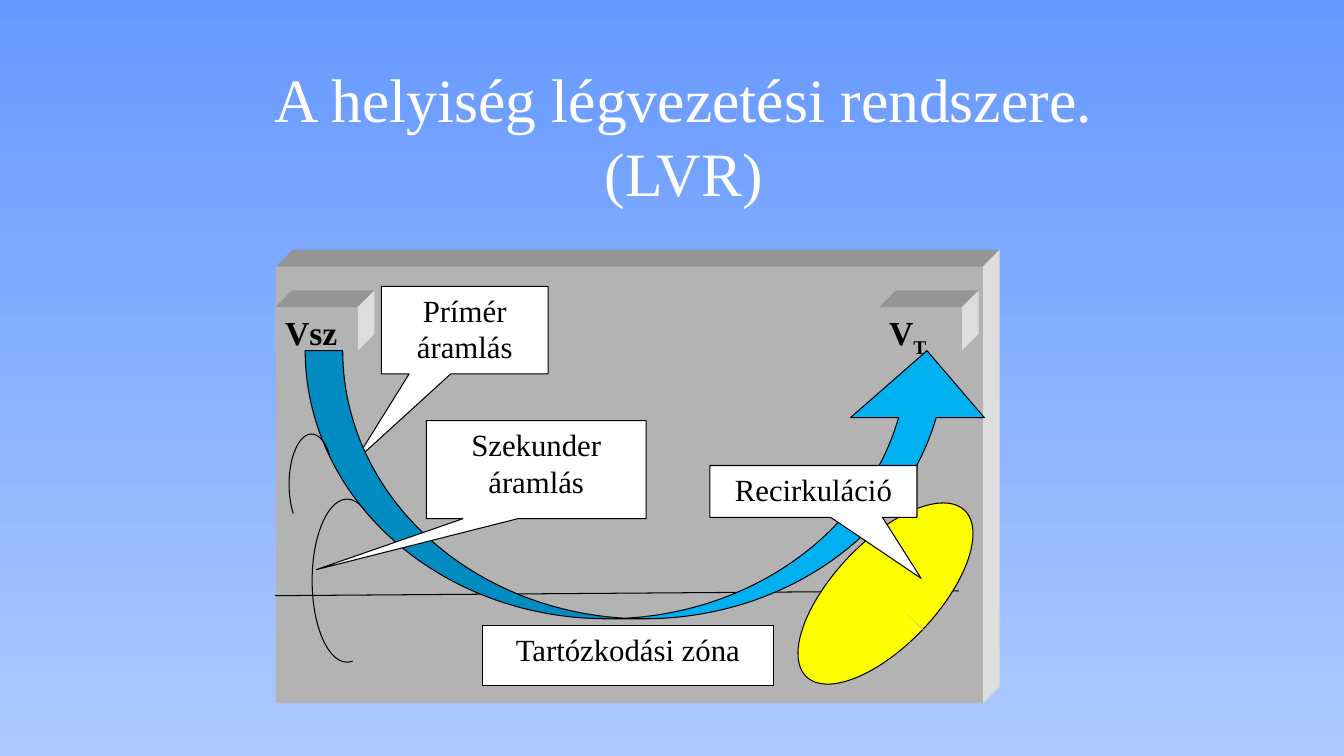
from pptx import Presentation
from pptx.dml.color import RGBColor
from pptx.enum.shapes import MSO_CONNECTOR, MSO_SHAPE
from pptx.enum.text import MSO_ANCHOR, PP_ALIGN
from pptx.oxml.ns import qn
from pptx.util import Pt
from lxml.etree import SubElement

COLORS = {
    "sky": "6699FF", "haze": "ADC9FF", "white": "FFFFFF", "black": "000000",
    "front": "B3B3B3", "top": "959595", "side": "DDDDDD",
    "air": "00B0F0", "recirculation": "FFFF00",
}
FONT = "Times New Roman"
DEPTH = 12


def rgb(name):
    return RGBColor.from_string(COLORS[name])


class RoomSlide:
    def __init__(self, prs):
        self.slide = prs.slides.add_slide(prs.slide_layouts[5])
        self.shapes = self.slide.shapes

    def background(self, start, end):
        fill = self.slide.background.fill
        fill.gradient()
        fill.gradient_angle = 270
        for stop, name, pos in zip(fill.gradient_stops, (start, end), (0, 1)):
            stop.color.rgb = rgb(name)
            stop.position = pos

    def text(self, sp, text, size, color="black", bold=False,
             align=PP_ALIGN.CENTER, anchor=MSO_ANCHOR.TOP):
        tf = sp.text_frame
        tf.text = text
        tf.word_wrap = True
        tf.vertical_anchor = anchor
        for p in tf.paragraphs:
            p.alignment = align
            for r in p.runs:
                self.font(r, size, color, bold)

    def font(self, r, size, color, bold):
        r.font.name = FONT
        r.font.size = Pt(size)
        r.font.bold = bold
        r.font.color.rgb = rgb(color)

    def title(self, text, x, y, w, h):
        sp = self.shapes.title
        sp.left, sp.top, sp.width, sp.height = Pt(x), Pt(y), Pt(w), Pt(h)
        self.text(sp, text, 44, "white", anchor=MSO_ANCHOR.MIDDLE)

    def paint(self, sp, fill, line):
        sp.shadow.inherit = False
        if fill:
            sp.fill.solid()
            sp.fill.fore_color.rgb = rgb(fill)
        else:
            sp.fill.background()
        if line:
            sp.line.color.rgb = rgb(line)
            sp.line.width = Pt(0.75)
        else:
            sp.line.fill.background()

    def shape(self, kind, x, y, w, h, fill=None, line="black", adj=()):
        sp = self.shapes.add_shape(kind, Pt(x), Pt(y), Pt(w), Pt(h))
        for i, value in enumerate(adj):
            sp.adjustments[i] = value
        self.paint(sp, fill, line)
        return sp

    def block(self, x, y, w, h):
        """Draw a box with a top and a right face, and return its front."""
        d, right, bottom = DEPTH, x + w, y + h
        faces = {
            "top": [(x, y), (x + d, y - d), (right + d, y - d), (right, y)],
            "side": [(right, y), (right + d, y - d),
                     (right + d, bottom - d), (right, bottom)],
        }
        for color, points in faces.items():
            points = [(Pt(px), Pt(py)) for px, py in points]
            builder = self.shapes.build_freeform(*points[0])
            builder.add_line_segments(points[1:])
            self.paint(builder.convert_to_shape(), color, None)
        return self.shape(MSO_SHAPE.RECTANGLE, x, y, w, h, "front", None)

    def vent(self, x, y, name, subscript=""):
        sp = self.block(x, y, 59, 31)
        self.text(sp, name, 24, bold=True, align=PP_ALIGN.LEFT)
        if subscript:
            r = sp.text_frame.paragraphs[0].add_run()
            r.text = subscript
            self.font(r, 24, "black", True)
            r.font._element.set("baseline", "-25000")

    def label(self, text, x, y, w, h, pointer=None):
        kind = MSO_SHAPE.RECTANGULAR_CALLOUT if pointer else MSO_SHAPE.RECTANGLE
        sp = self.shape(kind, x, y, w, h, "white", adj=pointer or ())
        self.text(sp, text, 22)

    def arc(self, x, y, w, h, start, end, fill=None, rotation=0):
        """Draw an arc clockwise between two angles in degrees."""
        adj = [angle * 0.6 for angle in (start, end)]
        sp = self.shape(MSO_SHAPE.ARC, x, y, w, h, fill, adj=adj)
        sp.rotation = rotation

    def line(self, x1, y1, x2, y2):
        c = self.shapes.add_connector(
            MSO_CONNECTOR.STRAIGHT, Pt(x1), Pt(y1), Pt(x2), Pt(y2))
        c.line.color.rgb = rgb("black")
        c.line.width = Pt(0.75)
        SubElement(c._element.spPr, qn("a:effectLst"))


def main():
    prs = Presentation()
    prs.slide_width, prs.slide_height = Pt(960), Pt(540)
    s = RoomSlide(prs)
    s.background("sky", "haze")
    s.title("A helyiség légvezetési rendszere. (LVR)", 174, 48, 629, 97)

    s.block(197, 190.5, 505, 312)
    s.line(196.5, 425.5, 685, 422)
    s.label("Prímér áramlás", 272.5, 204.5, 119, 62.5, (-0.66, 1.5))
    s.vent(196.5, 219.5, "Vsz")
    s.vent(628, 219.5, "V", "T")
    s.label("Tartózkodási zóna", 344.5, 447, 208, 42.5)
    s.shape(MSO_SHAPE.CURVED_UP_ARROW, 218, 250.5, 492, 191.5, "air",
            adj=(0.14, 0.5, 0.25))
    s.arc(223, 356.5, 50, 116.5, 86, 284)
    s.arc(595.5, 342, 74, 164, 1.05, 0, "recirculation", 43.5)
    s.label("Recirkuláció", 507, 332.5, 148, 37, (0.52, 1.68))
    s.arc(206.5, 310, 32, 72, 122, 302)
    s.label("Szekunder\náramlás", 304.5, 300.5, 157, 70, (-1, 1.02))

    prs.save("out.pptx")


if __name__ == "__main__":
    main()
